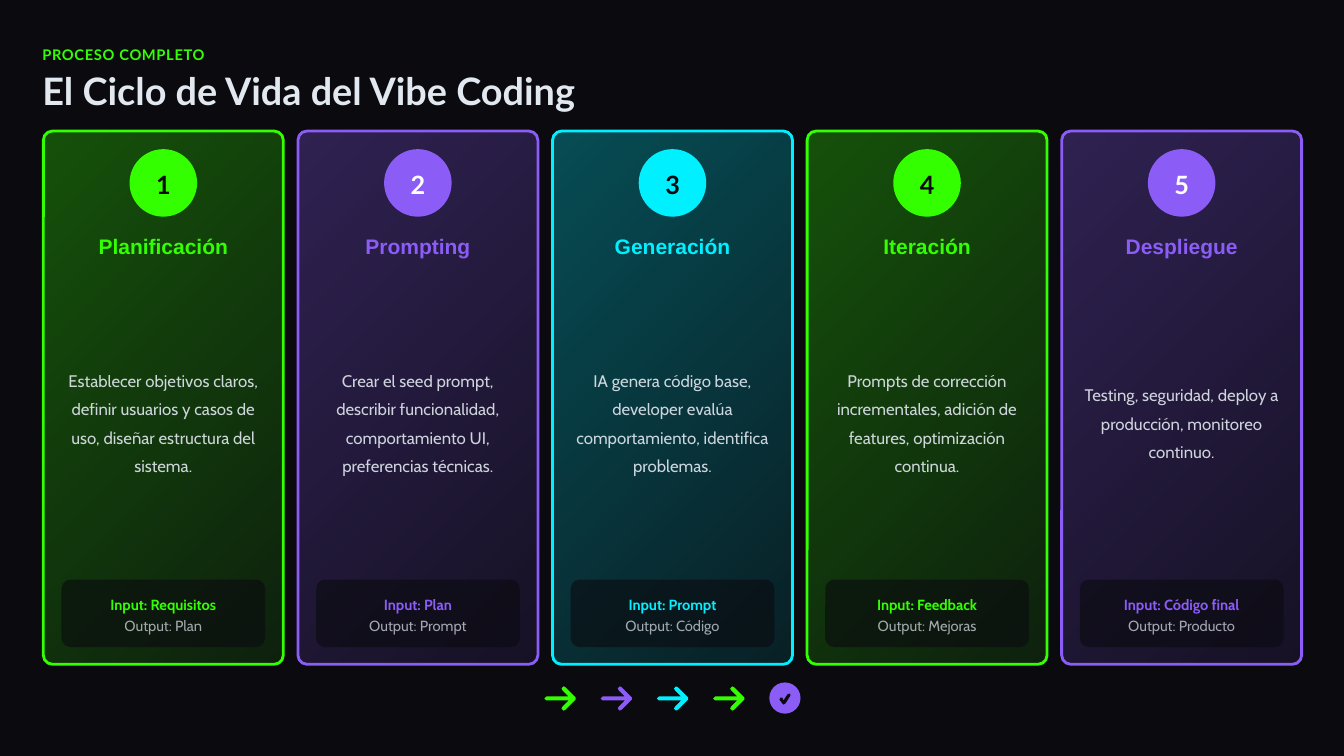
from dataclasses import dataclass

from lxml import etree
from pptx import Presentation
from pptx.dml.color import RGBColor
from pptx.enum.shapes import MSO_SHAPE
from pptx.enum.text import MSO_ANCHOR, PP_ALIGN
from pptx.oxml.ns import qn
from pptx.util import Inches, Pt

OVAL = MSO_SHAPE.OVAL
ROUNDED = MSO_SHAPE.ROUNDED_RECTANGLE
MIDDLE = MSO_ANCHOR.MIDDLE
LEFT = PP_ALIGN.LEFT
CENTER = PP_ALIGN.CENTER


@dataclass(frozen=True)
class Theme:
    dark: str = "0A0A0F"
    light: str = "E2E8F0"
    white: str = "FFFFFF"
    green: str = "33FF00"
    violet: str = "8B5CF6"
    cyan: str = "00F0FF"
    heading_font: str = "Lato"
    stage_font: str = "Arial"
    body_font: str = "Cabin"
    title_size: float = 27
    number_size: float = 18
    stage_size: float = 15
    body_size: float = 12
    small_size: float = 10.5


THEME = Theme()
STAGES = [
    ("Planificación", THEME.green, THEME.dark, "Requisitos", "Plan",
     "Establecer objetivos claros, definir usuarios y casos de uso, "
     "diseñar estructura del sistema."),
    ("Prompting", THEME.violet, THEME.white, "Plan", "Prompt",
     "Crear el seed prompt, describir funcionalidad, comportamiento UI, "
     "preferencias técnicas."),
    ("Generación", THEME.cyan, THEME.dark, "Prompt", "Código",
     "IA genera código base, developer evalúa comportamiento, "
     "identifica problemas."),
    ("Iteración", THEME.green, THEME.dark, "Feedback", "Mejoras",
     "Prompts de corrección incrementales, adición de features, "
     "optimización continua."),
    ("Despliegue", THEME.violet, THEME.white, "Código final", "Producto",
     "Testing, seguridad, deploy a producción, monitoreo continuo."),
]
FIRST_CENTER = 1.62
CARD_PITCH = (11.72 - FIRST_CENTER) / 4
CORNER = 0.09
FIRST_ARROW = 5.4
ARROW_PITCH = (7.63 - FIRST_ARROW) / 4
ARROW_MIDDLE = 6.93
ARROW_HALF = [
    (0, 0), (0.01, -0.01), (0.02, -0.02), (0.24, -0.02), (0.18, -0.08),
    (0.17, -0.1), (0.18, -0.11), (0.19, -0.12), (0.21, -0.11),
    (0.31, -0.01), (0.31, 0),
]
ARROW = ARROW_HALF + [(x, -y) for x, y in reversed(ARROW_HALF[1:-1])]
TICK = [
    (0.21, -0.03), (0.16, 0.05), (0.14, 0.06), (0.13, 0.05), (0.1, 0.01),
    (0.11, -0.01), (0.13, -0.01), (0.14, 0.02), (0.18, -0.04),
    (0.2, -0.05), (0.21, -0.04),
]


class Page:
    def __init__(self, deck, theme):
        self.theme = theme
        self.slide = deck.slides.add_slide(deck.slide_layouts[6])
        background = self.slide.background.fill
        background.solid()
        background.fore_color.rgb = RGBColor.from_string(theme.dark)

    def fade(self, element, opacities):
        for color, opacity in zip(element.iter(qn("a:srgbClr")), opacities):
            etree.SubElement(color, qn("a:alpha")).set("val", str(opacity * 1000))

    def paint(self, shape, color, opacity=100):
        shape.shadow.inherit = False
        shape.fill.solid()
        shape.fill.fore_color.rgb = RGBColor.from_string(color)
        shape.line.fill.background()
        if opacity < 100:
            self.fade(shape._element, [opacity])

    def shape(self, kind, left, top, width, height, color, opacity=100):
        shape = self.slide.shapes.add_shape(
            kind, Inches(left), Inches(top), Inches(width), Inches(height))
        if kind == ROUNDED:
            shape.adjustments[0] = CORNER / min(width, height)
        self.paint(shape, color, opacity)
        return shape

    def card(self, left, top, width, height, color):
        card = self.shape(ROUNDED, left, top, width, height, color)
        card.fill.gradient()
        card.fill.gradient_angle = 315
        for stop, position in zip(card.fill.gradient_stops, (0, 1)):
            stop.position = position
            stop.color.rgb = RGBColor.from_string(color)
        card.line.color.rgb = RGBColor.from_string(color)
        card.line.width = Pt(2)
        self.fade(card._element, [30, 10])

    def outline(self, points, left, top, color):
        corners = [(Inches(left + x), Inches(top + y)) for x, y in points]
        builder = self.slide.shapes.build_freeform(*corners[0])
        builder.add_line_segments(corners[1:], close=True)
        self.paint(builder.convert_to_shape(), color)

    def text(self, text, left, top, width, height, font, size, color,
             bold=False, align=CENTER, leading=1.2, opacity=100, tracking=0):
        box = self.slide.shapes.add_textbox(
            Inches(left), Inches(top), Inches(width), Inches(height))
        frame = box.text_frame
        frame.word_wrap = True
        frame.vertical_anchor = MIDDLE
        frame.margin_left = frame.margin_right = 0
        frame.margin_top = frame.margin_bottom = 0
        para = frame.paragraphs[0]
        para.text = text
        para.alignment = align
        para.line_spacing = leading
        para.font.name = font
        para.font.size = Pt(size)
        para.font.bold = bold
        para.font.color.rgb = RGBColor.from_string(color)
        if opacity < 100:
            self.fade(para._p, [opacity])
        if tracking:
            para._p.pPr.find(qn("a:defRPr")).set("spc", str(int(tracking * 100)))

    def stage(self, number, center, name, color, number_color, source, result, summary):
        theme = self.theme
        self.card(center - 1.19, 1.3, 2.38, 5.29, color)
        self.shape(OVAL, center - 0.335, 1.48, 0.67, 0.67, color)
        self.text(str(number), center - 0.395, 1.48, 0.79, 0.67, theme.heading_font,
                  theme.number_size, number_color, bold=True, leading=1.1)
        self.text(name, center - 1.06, 2.27, 2.12, 0.29, theme.stage_font,
                  theme.stage_size, color, bold=True)
        self.text(summary, center - 1.05, 2.69, 2.1, 2.94, theme.body_font,
                  theme.body_size, theme.light, leading=1.4, opacity=90)
        self.shape(ROUNDED, center - 1.01, 5.75, 2.02, 0.67, theme.dark, 60)
        self.text(f"Input: {source}", center - 0.92, 5.88, 1.84, 0.21,
                  theme.body_font, theme.small_size, color, bold=True)
        self.text(f"Output: {result}", center - 0.92, 6.08, 1.84, 0.21,
                  theme.body_font, theme.small_size, theme.light, opacity=70)


def main():
    deck = Presentation()
    deck.slide_width = Inches(13.33)
    deck.slide_height = Inches(7.5)
    page = Page(deck, THEME)
    page.text("PROCESO COMPLETO", 0.42, 0.42, 12.57, 0.21, THEME.heading_font,
              THEME.small_size, THEME.green, bold=True, align=LEFT, tracking=0.5)
    page.text("El Ciclo de Vida del Vibe Coding", 0.42, 0.71, 12.69, 0.42,
              THEME.heading_font, THEME.title_size, THEME.light, bold=True,
              align=LEFT, leading=0.9)
    for index, stage in enumerate(STAGES):
        page.stage(index + 1, FIRST_CENTER + index * CARD_PITCH, *stage)
    for index, stage in enumerate(STAGES[:-1]):
        page.outline(ARROW, FIRST_ARROW + index * ARROW_PITCH, ARROW_MIDDLE, stage[1])
    badge_left = FIRST_ARROW + 4 * ARROW_PITCH
    page.shape(OVAL, badge_left, 6.77, 0.31, 0.31, THEME.violet)
    page.outline(TICK, badge_left, ARROW_MIDDLE, THEME.dark)
    deck.save("out.pptx")


if __name__ == "__main__":
    main()
